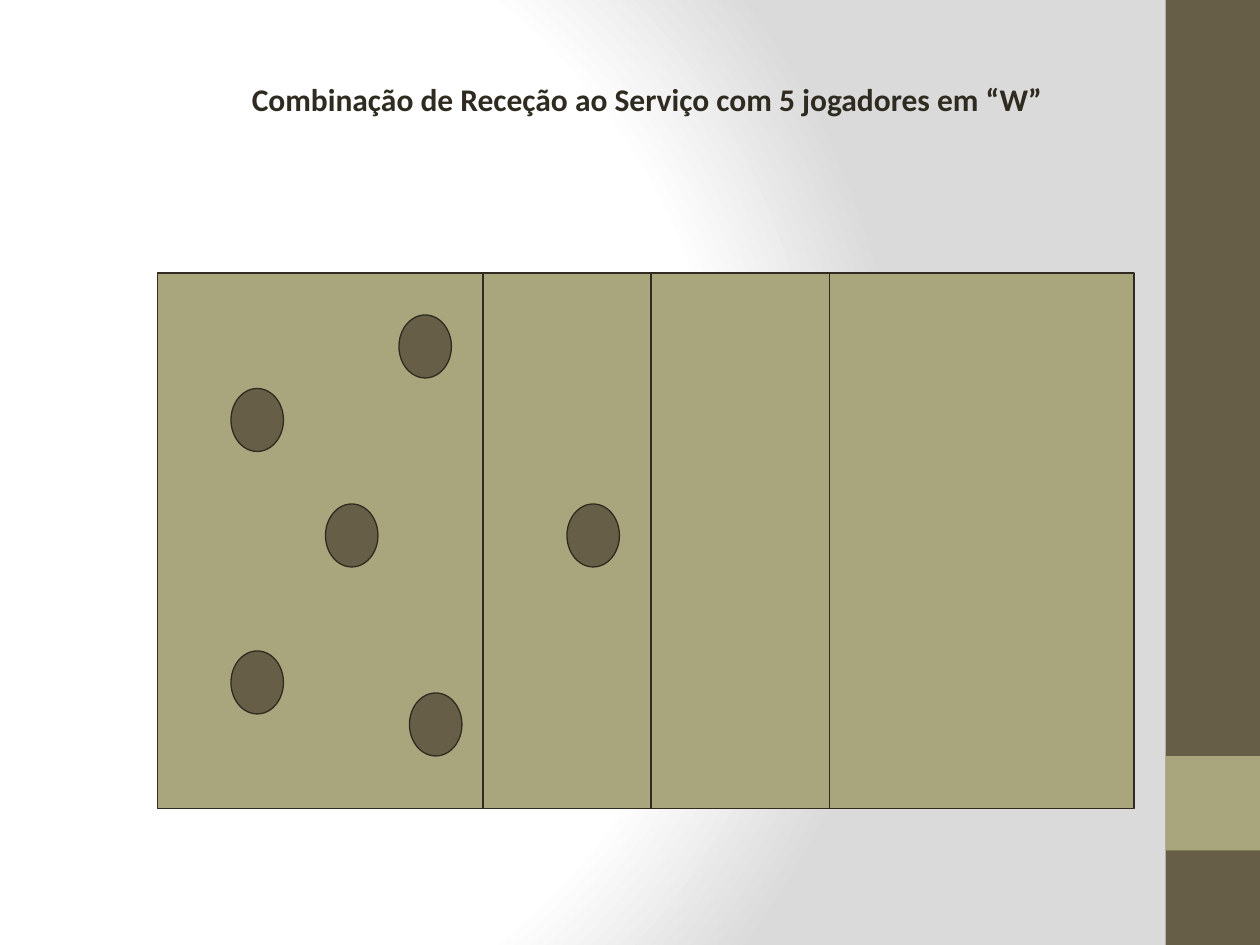
from lxml import etree
from pptx import Presentation
from pptx import util as u
from pptx.dml.color import RGBColor
from pptx.enum import shapes, text
from pptx.oxml import parse_xml
from pptx.oxml.ns import nsdecls, qn

COLUMNS, ROWS = 120, 90
DARK, OLIVE, INK = "675E47", "A9A57C", "2F2B20"
COURT = (15, 26, 93, 51)
COURT_LINES = (62, 46, 79)
PLAYERS = ((54, 48), (38, 30), (22, 37), (31, 48), (39, 66), (22, 62))
PLAYER_SIZE = (5, 6)


def color(value):
    return RGBColor.from_string(value)


def write(box, words, font="Calibri", size=18, ink=INK, bold=False):
    frame = box.text_frame
    frame.word_wrap = False
    frame.auto_size = text.MSO_AUTO_SIZE.SHAPE_TO_FIT_TEXT
    span = frame.paragraphs[0].add_run()
    span.text = words
    span.font.name = font
    span.font.size = u.Pt(size)
    span.font.bold = bold
    span.font.color.rgb = color(ink)


class Painter:
    """Draws on one page; lengths are columns and rows of the grid."""

    def __init__(self, deck, line_width=0.75):
        self.page = deck.slides.add_slide(deck.slide_layouts[6])
        self.column = deck.slide_width / COLUMNS
        self.row = deck.slide_height / ROWS
        self.line_width = u.Pt(line_width)

    def place(self, *lengths):
        """Turn alternating columns and rows into slide units."""
        steps = (self.column, self.row) * 2
        return [round(length * step) for length, step in zip(lengths, steps)]

    def background(self, stops, center):
        """Fill the page with a circular gradient around center (l, t, r, b in percent)."""
        self.page.background.fill.gradient()
        blend = self.page.element.find(".//" + qn("a:gradFill"))
        marks = "".join(
            f'<a:gs pos="{share * 1000}"><a:srgbClr val="{value}"/></a:gs>'
            for share, value in stops)
        sides = " ".join(f'{side}="{share * 1000}"' for side, share in zip("ltrb", center))
        blend.getparent().replace(blend, parse_xml(
            f'<a:gradFill rotWithShape="1" {nsdecls("a")}><a:gsLst>{marks}</a:gsLst>'
            f'<a:path path="circle"><a:fillToRect {sides}/></a:path></a:gradFill>'))

    def shape(self, kind, area, fill, line=None):
        shape = self.page.shapes.add_shape(kind, *self.place(*area))
        shape.shadow.inherit = False
        shape.fill.solid()
        shape.fill.fore_color.rgb = color(fill)
        if line:
            shape.line.color.rgb = color(line)
            shape.line.width = self.line_width
        else:
            shape.line.fill.background()

    def line(self, start, end, ink=INK):
        line = self.page.shapes.add_connector(
            shapes.MSO_CONNECTOR.STRAIGHT, *self.place(*start, *end))
        line.line.color.rgb = color(ink)
        line.line.width = self.line_width
        etree.SubElement(line.element.spPr, qn("a:effectLst"))

    def label(self, area, words, **style):
        write(self.page.shapes.add_textbox(*self.place(*area)), words, **style)


def main():
    deck = Presentation()
    deck.slide_width, deck.slide_height = u.Inches(10), u.Inches(7.5)
    painter = Painter(deck)
    rectangle, oval = shapes.MSO_SHAPE.RECTANGLE, shapes.MSO_SHAPE.OVAL

    painter.background(((0, "FFFFFF"), (75, "FFFFFF"), (100, "DADADA")), (20, 50, 100, 50))
    painter.shape(rectangle, (111, 0, 9, ROWS), DARK)
    painter.shape(rectangle, (111, 72, 9, 9), OLIVE)
    painter.label((22.8, 7, 78.4, 4.8),
                  "Combinação de Receção ao Serviço com 5 jogadores em “W”", bold=True)

    painter.shape(rectangle, COURT, OLIVE, line=INK)
    for player in PLAYERS:
        painter.shape(oval, player + PLAYER_SIZE, DARK, line=INK)
    top, bottom = COURT[1], COURT[1] + COURT[3]
    for column in COURT_LINES:
        painter.line((column, top), (column, bottom))

    deck.save("out.pptx")


if __name__ == "__main__":
    main()
